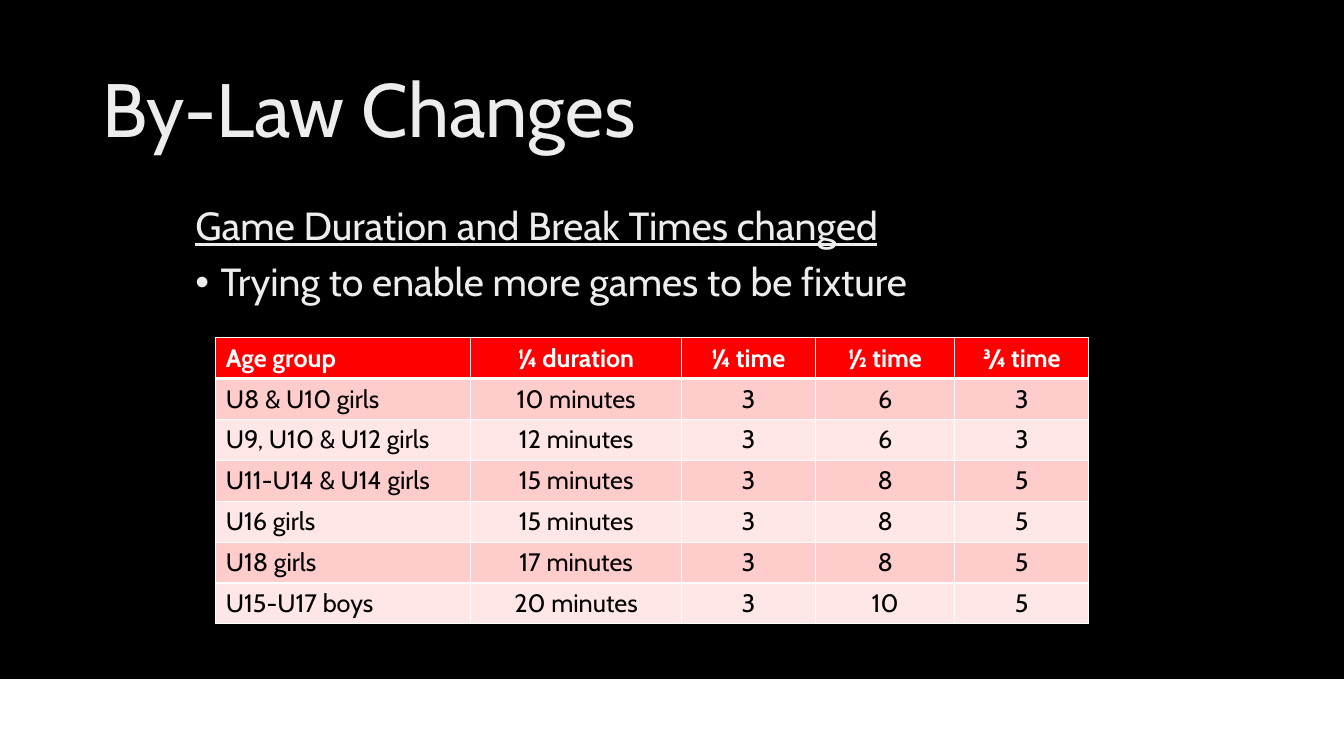
from pptx import Presentation as Deck
from pptx.dml.color import RGBColor as Rgb
from pptx.enum.shapes import MSO_SHAPE as Shape
from pptx.enum.text import MSO_ANCHOR as Anchor, PP_ALIGN as Align
from pptx.oxml import parse_xml
from pptx.oxml.ns import nsdecls
from pptx.util import Inches, Pt

BLACK = Rgb(0x00, 0x00, 0x00)
WHITE = Rgb(0xFF, 0xFF, 0xFF)
PALE = Rgb(0xED, 0xED, 0xED)
RED = Rgb(0xFF, 0x00, 0x00)
ROSE = Rgb(0xFF, 0xCC, 0xCC)
BLUSH = Rgb(0xFF, 0xE7, 0xE7)

HEAD = ["Age group", "¼ duration", "¼ time", "½ time", "¾ time"]
TIMES = [
    ["U8 & U10 girls", "10 minutes", "3", "6", "3"],
    ["U9, U10 & U12 girls", "12 minutes", "3", "6", "3"],
    ["U11-U14 & U14 girls", "15 minutes", "3", "8", "5"],
    ["U16 girls", "15 minutes", "3", "8", "5"],
    ["U18 girls", "17 minutes", "3", "8", "5"],
    ["U15-U17 boys", "20 minutes", "3", "10", "5"],
]


def apply(target, values):
    for name, value in values.items():
        setattr(target, name, value)


class Page:
    face = "Cabin"

    def __init__(self, deck):
        self.wide, self.high = deck.slide_width, deck.slide_height
        self.slide = deck.slides.add_slide(deck.slide_layouts[6])
        self.shapes = self.slide.shapes

    def across(self, share):
        return int(self.wide * share / 100)

    def down(self, share):
        return int(self.high * share / 100)

    def place(self, left, top, width, height):
        return self.across(left), self.down(top), self.across(width), self.down(height)

    def ground(self, color):
        fill = self.slide.background.fill
        fill.solid()
        fill.fore_color.rgb = color

    def band(self, box, color):
        shape = self.shapes.add_shape(Shape.RECTANGLE, *self.place(*box))
        shape.shadow.inherit = False
        shape.fill.solid()
        shape.fill.fore_color.rgb = color
        shape.line.color.rgb = color
        shape.line.width = Pt(1)

    def words(self, para, text, color, font):
        run = para.add_run()
        run.text = text
        apply(run.font, {"name": self.face, **font})
        run.font.color.rgb = color

    def bullet(self, para):
        props = para._p.get_or_add_pPr()
        props.set("marL", str(Inches(0.25)))
        props.set("indent", str(-Inches(0.25)))
        props.append(parse_xml(f'<a:buFont {nsdecls("a")} typeface="Arial"/>'))
        props.append(parse_xml(f'<a:buChar {nsdecls("a")} char="•"/>'))

    def text(self, box, lines, size, anchor):
        frame = self.shapes.add_textbox(*self.place(*box)).text_frame
        apply(frame, {"word_wrap": True, "vertical_anchor": anchor})
        for i, (line, under, dot) in enumerate(lines):
            para = frame.add_paragraph() if i else frame.paragraphs[0]
            if dot:
                self.bullet(para)
            apply(para, {"line_spacing": 0.9, "space_before": Pt(10 if i else 0)})
            self.words(para, line, PALE, {"size": Pt(size), "underline": under})

    def edge(self, cell, widths):
        props = cell._tc.get_or_add_tcPr()
        for i, (side, width) in enumerate(widths.items()):
            props.insert(i, parse_xml(
                f'<a:ln{side} {nsdecls("a")} w="{int(Pt(width))}"><a:solidFill>'
                f'<a:srgbClr val="{WHITE}"/></a:solidFill></a:ln{side}>'))

    def table(self, left, top, widths, height, rows):
        box = self.place(left, top, sum(widths), height * len(rows))
        table = self.shapes.add_table(len(rows), len(widths), *box).table
        for column, width in zip(table.columns, widths):
            column.width = self.across(width)
        for r, row in enumerate(rows):
            table.rows[r].height = self.down(height)
            fill = (ROSE if r % 2 else BLUSH) if r else RED
            color = BLACK if r else WHITE
            for c, entry in enumerate(row):
                cell = table.cell(r, c)
                cell.fill.solid()
                cell.fill.fore_color.rgb = fill
                self.edge(cell, {"L": 1, "R": 1, "T": 3 if r == 1 else 1, "B": 1 if r else 3})
                para = cell.text_frame.paragraphs[0]
                para.alignment = Align.CENTER if c else Align.LEFT
                self.words(para, entry, color, {"size": Pt(18), "bold": r == 0})


def main():
    deck = Deck()
    apply(deck, {"slide_width": Inches(13.33), "slide_height": Inches(7.5)})
    page = Page(deck)
    page.ground(BLACK)
    page.band((0, 89.87, 100, 10.13), WHITE)
    page.text((6.9, 5.33, 86.25, 19.33), [("By-Law Changes", False, False)], 54, Anchor.MIDDLE)
    page.text((13.8, 26.67, 79.35, 63.47), [
        ("Game Duration and Break Times changed", True, False),
        ("Trying to enable more games to be fixture", False, True),
    ], 28, Anchor.TOP)
    page.table(16.05, 44.67, [18.98, 15.68, 9.98, 10.35, 9.98], 5.41, [HEAD, *TIMES])
    deck.save("out.pptx")


if __name__ == "__main__":
    main()
